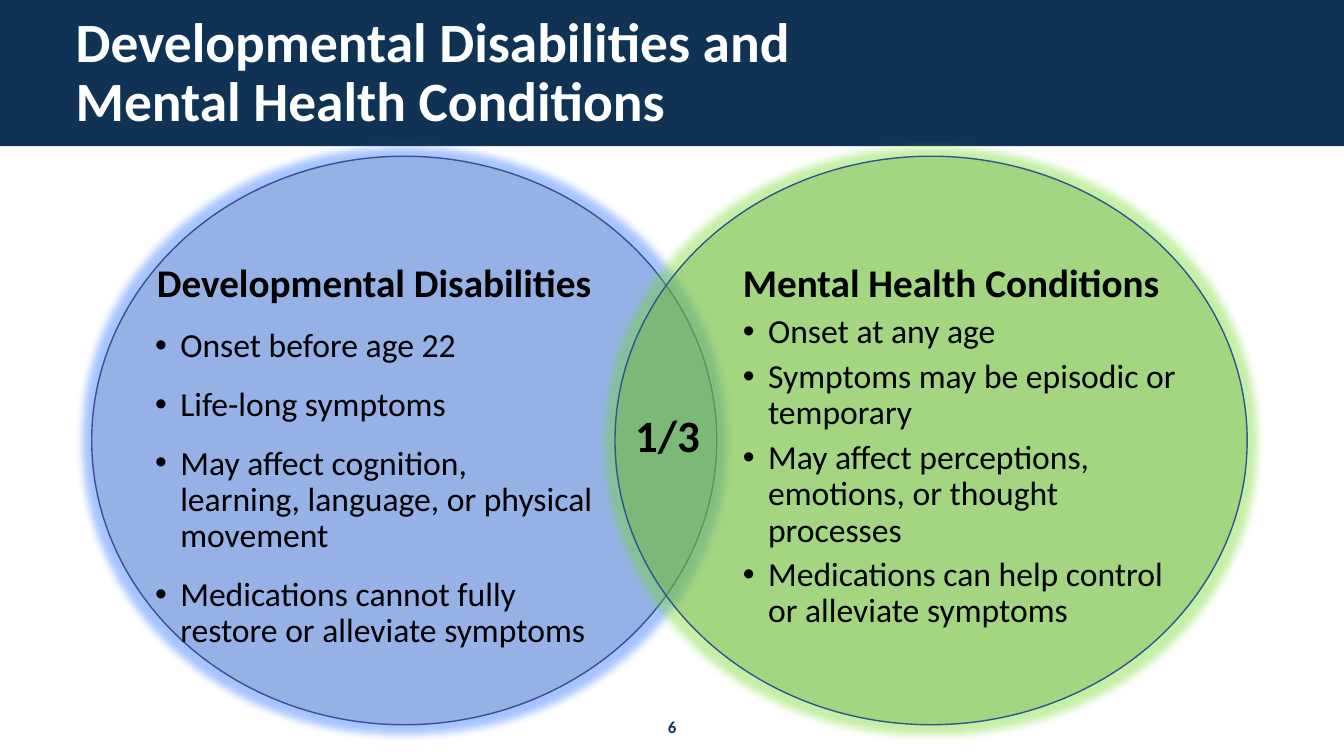
import pptx
import pptx.util
import pptx.dml.color
import pptx.enum.shapes
import pptx.enum.text
import pptx.oxml
import pptx.oxml.ns
import lxml.etree

Inches = pptx.util.Inches
Pt = pptx.util.Pt
Align = pptx.enum.text.PP_ALIGN
Anchor = pptx.enum.text.MSO_ANCHOR
ShapeType = pptx.enum.shapes.MSO_SHAPE
qn = pptx.oxml.ns.qn

NAVY = "103255"
BLACK = "000000"
OUTLINE = "325491"
SLIDE_WIDTH, SLIDE_HEIGHT = 13.33, 7.5


def color(value):
    return pptx.dml.color.RGBColor.from_string(value)


def set_alpha(color_element, percent):
    alpha = lxml.etree.SubElement(color_element, qn("a:alpha"))
    alpha.set("val", str(percent * 1000))


def add_run(paragraph, text, size, value, bold=False):
    run = paragraph.add_run()
    run.text = text
    run.font.name = "Calibri"
    run.font.size = Pt(size)
    run.font.bold = bold
    run.font.color.rgb = color(value)


def add_shape(slide, kind, box, fill):
    shape = slide.shapes.add_shape(kind, *map(Inches, box))
    shape.shadow.inherit = False
    shape.fill.solid()
    shape.fill.fore_color.rgb = color(fill)
    return shape


def add_text_box(slide, box):
    frame = slide.shapes.add_textbox(*map(Inches, box)).text_frame
    frame.word_wrap = True
    return frame


def add_label(slide, box, text, size, value):
    paragraph = add_text_box(slide, box).paragraphs[0]
    paragraph.alignment = Align.CENTER
    add_run(paragraph, text, size, value, True)


def add_header(slide, box, lines):
    left, top, width, height = box
    band = add_shape(slide, ShapeType.RECTANGLE, box, NAVY)
    band.line.fill.background()
    title = slide.shapes.title
    title.element.addprevious(band.element)
    title.left, title.top = Inches(left + 0.65), Inches(top + 0.4)
    title.width, title.height = Inches(12.04), Inches(0.67)
    frame = title.text_frame
    frame.auto_size = pptx.enum.text.MSO_AUTO_SIZE.NONE
    frame.word_wrap = True
    frame.vertical_anchor = Anchor.MIDDLE
    paragraph = frame.paragraphs[0]
    paragraph.alignment = Align.LEFT
    paragraph.line_spacing = 0.9
    for index, line in enumerate(lines):
        if index:
            paragraph.add_line_break()
        add_run(paragraph, line, 39.6, "FFFFFF", True)


def add_circle(slide, box, fill, opacity, glow_value):
    circle = add_shape(slide, ShapeType.OVAL, box, fill)
    circle.line.color.rgb = color(OUTLINE)
    circle.line.width = Pt(1)
    properties = circle.element.spPr
    set_alpha(properties.find(qn("a:solidFill")).find(qn("a:srgbClr")), opacity)
    glow = lxml.etree.SubElement(properties.find(qn("a:effectLst")), qn("a:glow"))
    glow.set("rad", str(Pt(11)))
    glow_color = lxml.etree.SubElement(glow, qn("a:srgbClr"))
    glow_color.set("val", glow_value)
    set_alpha(glow_color, 40)


def add_bullet(paragraph):
    properties = paragraph._p.get_or_add_pPr()
    properties.set("marL", str(Inches(0.25)))
    properties.set("indent", str(Inches(-0.25)))
    font = lxml.etree.SubElement(properties, qn("a:buFont"))
    font.set("typeface", "Arial")
    bullet = lxml.etree.SubElement(properties, qn("a:buChar"))
    bullet.set("char", "•")


def add_condition(slide, box, heading, items, alignment, space_before):
    frame = add_text_box(slide, box)
    paragraph = frame.paragraphs[0]
    paragraph.alignment = alignment
    paragraph.line_spacing = 0.9
    paragraph.space_after = Pt(6)
    add_run(paragraph, heading, 28, BLACK, True)
    for item in items:
        paragraph = frame.add_paragraph()
        paragraph.line_spacing = 0.9
        paragraph.space_before = Pt(space_before)
        paragraph.space_after = Pt(6)
        add_bullet(paragraph)
        add_run(paragraph, item, 24, BLACK)


def add_venn(slide, box):
    left, top, width, height = box
    add_circle(slide, (left, top, 6.2, height), "8FAADC", 70, "216BFF")
    add_circle(slide, (left + width - 6.27, top, 6.27, height), "70AD47", 39, "6ED822")
    text_top = top + 1.02
    add_condition(
        slide, (left + 0.53, text_top, 4.54, 1.45), "Developmental Disabilities",
        ["Onset before age 22", "Life-long symptoms",
         "May affect cognition, learning, language, or physical movement",
         "Medications cannot fully restore or alleviate symptoms"],
        Align.CENTER, 10)
    add_label(slide, (left + 5.22, top + 2.45, 0.98, 0.67), "1/3", 32, BLACK)
    add_condition(
        slide, (left + 6.36, text_top, 4.64, 1.45), "Mental Health Conditions",
        ["Onset at any age", "Symptoms may be episodic or temporary",
         "May affect perceptions, emotions, or thought processes",
         "Medications can help control or alleviate symptoms"],
        Align.LEFT, 0)


def main():
    presentation = pptx.Presentation()
    presentation.slide_width = Inches(SLIDE_WIDTH)
    presentation.slide_height = Inches(SLIDE_HEIGHT)
    slide = presentation.slides.add_slide(presentation.slide_layouts[5])
    add_header(slide, (0, 0, SLIDE_WIDTH, 1.45),
               ["Developmental Disabilities and", "Mental Health Conditions"])
    add_label(slide, (6.09, 7.06, 1.15, 0.3), "6", 12, NAVY)
    add_venn(slide, (0.91, 1.55, 11.46, 5.64))
    presentation.save("out.pptx")


if __name__ == "__main__":
    main()
